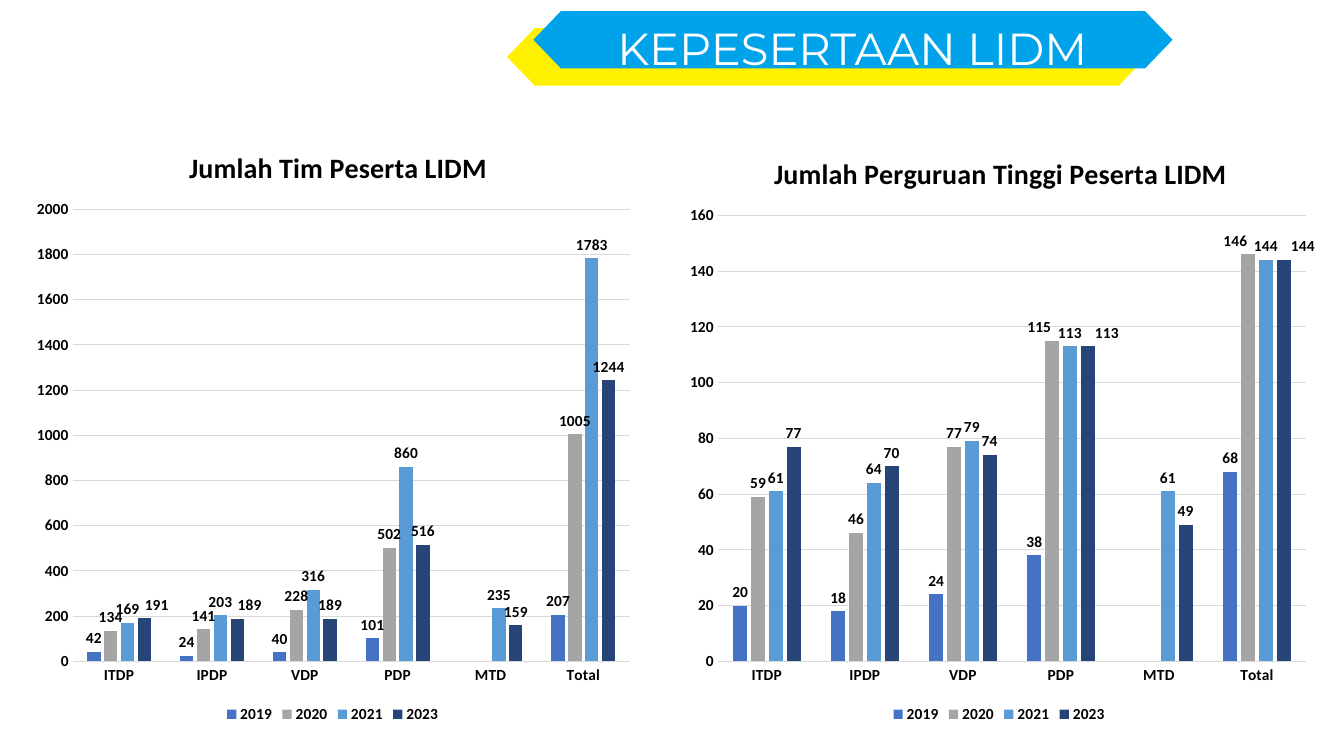
from dataclasses import dataclass

import pptx
import pptx.chart.data
import pptx.dml.color
import pptx.enum.chart
import pptx.enum.shapes
import pptx.enum.text
import pptx.oxml
import pptx.oxml.ns
import pptx.util
from pptx.util import Inches

CATEGORIES = ["ITDP", "IPDP", "VDP", "PDP", "MTD", "Total"]
YEARS = ["2019", "2020", "2021", "2023"]

TEAMS = dict(
    heading="Jumlah Tim Peserta LIDM",
    counts=[
        [42, 24, 40, 101, None, 207],
        [134, 141, 228, 502, None, 1005],
        [169, 203, 316, 860, 235, 1783],
        [191, 189, 189, 516, 159, 1244],
    ],
    top=2000, step=200,
    heading_at=dict(x=0.26, y=0.03),
    plot_at=dict(x=0.08, y=0.14, w=0.9, h=0.75),
    label_shifts={("2023", "ITDP"): 0.02, ("2023", "IPDP"): 0.02},
)
CAMPUSES = dict(
    heading="Jumlah Perguruan Tinggi Peserta LIDM",
    counts=[
        [20, 18, 24, 38, None, 68],
        [59, 46, 77, 115, None, 146],
        [61, 64, 79, 113, 61, 144],
        [77, 70, 74, 113, 49, 144],
    ],
    top=160, step=20,
    heading_at=dict(x=0.14, y=0.04),
    plot_at=dict(x=0.06, y=0.15, w=0.92, h=0.74),
    label_shifts={("2020", "PDP"): -0.02, ("2020", "Total"): -0.02,
                  ("2023", "PDP"): 0.03, ("2023", "Total"): 0.03},
)


@dataclass(frozen=True)
class Theme:
    yellow: str = "FFF000"
    blue: str = "00A2EA"
    white: str = "FFFFFF"
    ink: str = "000000"
    grid: str = "D9D9D9"
    years: tuple = ("4472C4", "A5A5A5", "5B9BD5", "264478")
    banner_font: str = "Montserrat"
    chart_font: str = "Calibri"
    banner_size: int = 32
    heading_size: int = 20
    label_size: int = 11


def rgb(code):
    return pptx.dml.color.RGBColor.from_string(code)


def format_font(font, size, color, name, bold=False):
    font.size = pptx.util.Pt(size)
    font.color.rgb = rgb(color)
    font.name = name
    font.bold = bold


def write(frame, text, align=pptx.enum.text.PP_ALIGN.CENTER, **font_format):
    paragraph = frame.paragraphs[0]
    paragraph.alignment = align
    run = paragraph.add_run()
    run.text = text
    format_font(run.font, **font_format)


def manual_layout(inner=False, **fractions):
    target = '<c:layoutTarget val="inner"/>' if inner else ""
    modes = "".join(f'<c:{key}Mode val="edge"/>' for key in ("x", "y")) if "y" in fractions else ""
    sizes = "".join(f'<c:{key} val="{value}"/>' for key, value in fractions.items())
    return pptx.oxml.parse_xml(
        f'<c:layout {pptx.oxml.ns.nsdecls("c")}><c:manualLayout>'
        f"{target}{modes}{sizes}</c:manualLayout></c:layout>"
    )


def place(element, layout, after=None):
    for old in element.findall(pptx.oxml.ns.qn("c:layout")):
        element.remove(old)
    if after is None:
        element.insert(0, layout)
    else:
        element.find(pptx.oxml.ns.qn(after)).addnext(layout)


class SlideBuilder:
    def __init__(self, slide, theme):
        self.slide = slide
        self.theme = theme
        self.label_format = dict(size=theme.label_size, color=theme.ink,
                                 name=theme.chart_font, bold=True)

    def ribbon(self, left, top, color):
        ribbon = self.slide.shapes.add_shape(
            pptx.enum.shapes.MSO_SHAPE.HEXAGON,
            Inches(left), Inches(top), Inches(6.34), Inches(0.57))
        ribbon.adjustments[0] = 0.48
        ribbon.shadow.inherit = False
        ribbon.fill.solid()
        ribbon.fill.fore_color.rgb = rgb(color)
        ribbon.line.fill.background()

    def banner_text(self, text, left, top, width, height):
        frame = self.slide.shapes.add_textbox(
            Inches(left), Inches(top), Inches(width), Inches(height)).text_frame
        frame.word_wrap = True
        write(frame, text, size=self.theme.banner_size,
              color=self.theme.white, name=self.theme.banner_font)

    def column_chart(self, left, width, heading, counts, top, step,
                     heading_at, plot_at, label_shifts):
        entries = pptx.chart.data.CategoryChartData()
        entries.categories = CATEGORIES
        for year, values in zip(YEARS, counts):
            entries.add_series(year, values)
        chart = self.slide.shapes.add_chart(
            pptx.enum.chart.XL_CHART_TYPE.COLUMN_CLUSTERED,
            Inches(left), Inches(1.24), Inches(width), Inches(5.98), entries).chart
        format_font(chart.font, **self.label_format)

        write(chart.chart_title.text_frame, heading,
              **{**self.label_format, "size": self.theme.heading_size})
        chart.chart_title.include_in_layout = False
        place(chart.chart_title._element, manual_layout(**heading_at), after="c:tx")

        chart.has_legend = True
        chart.legend.position = pptx.enum.chart.XL_LEGEND_POSITION.BOTTOM
        chart.legend.include_in_layout = False
        format_font(chart.legend.font, **self.label_format)

        self.axes(chart, top, step)
        plot = chart.plots[0]
        plot.gap_width = 219
        plot.overlap = -27
        plot.vary_by_categories = False
        for series, color in zip(plot.series, self.theme.years):
            series.format.fill.solid()
            series.format.fill.fore_color.rgb = rgb(color)
            self.value_labels(series, label_shifts)
        plot_area = chart._chartSpace.chart.plotArea
        place(plot_area, manual_layout(inner=True, **plot_at))

    def axes(self, chart, top, step):
        for axis in (chart.category_axis, chart.value_axis):
            axis.major_tick_mark = pptx.enum.chart.XL_TICK_MARK.NONE
            axis.minor_tick_mark = pptx.enum.chart.XL_TICK_MARK.NONE
            format_font(axis.tick_labels.font, **self.label_format)
        counts = chart.value_axis
        counts.minimum_scale = 0
        counts.maximum_scale = top
        counts.major_unit = step
        counts.format.line.fill.background()
        for line in (chart.category_axis.format.line, counts.major_gridlines.format.line):
            line.color.rgb = rgb(self.theme.grid)
            line.width = pptx.util.Pt(0.75)

    def value_labels(self, series, label_shifts):
        outside = pptx.enum.chart.XL_LABEL_POSITION.OUTSIDE_END
        labels = series.data_labels
        labels.show_value = True
        labels.position = outside
        format_font(labels.font, **self.label_format)
        for (year, category), shift in label_shifts.items():
            if year == series.name:
                index = CATEGORIES.index(category)
                label = series.points[index].data_label
                format_font(label.font, **self.label_format)
                label.position = outside
                shifted = series._element.xpath(f"c:dLbls/c:dLbl[c:idx/@val='{index}']")[0]
                place(shifted, manual_layout(x=shift), after="c:idx")


def main():
    presentation = pptx.Presentation()
    presentation.slide_width = Inches(13.33)
    presentation.slide_height = Inches(7.5)
    theme = Theme()
    builder = SlideBuilder(
        presentation.slides.add_slide(presentation.slide_layouts[6]), theme)
    builder.ribbon(5.03, 0.28, theme.yellow)
    builder.ribbon(5.29, 0.11, theme.blue)
    builder.banner_text("KEPESERTAAN LIDM", 5.65, 0.16, 5.61, 0.64)
    builder.column_chart(0.23, 6.14, **TEAMS)
    builder.column_chart(6.74, 6.34, **CAMPUSES)
    presentation.save("out.pptx")


if __name__ == "__main__":
    main()
